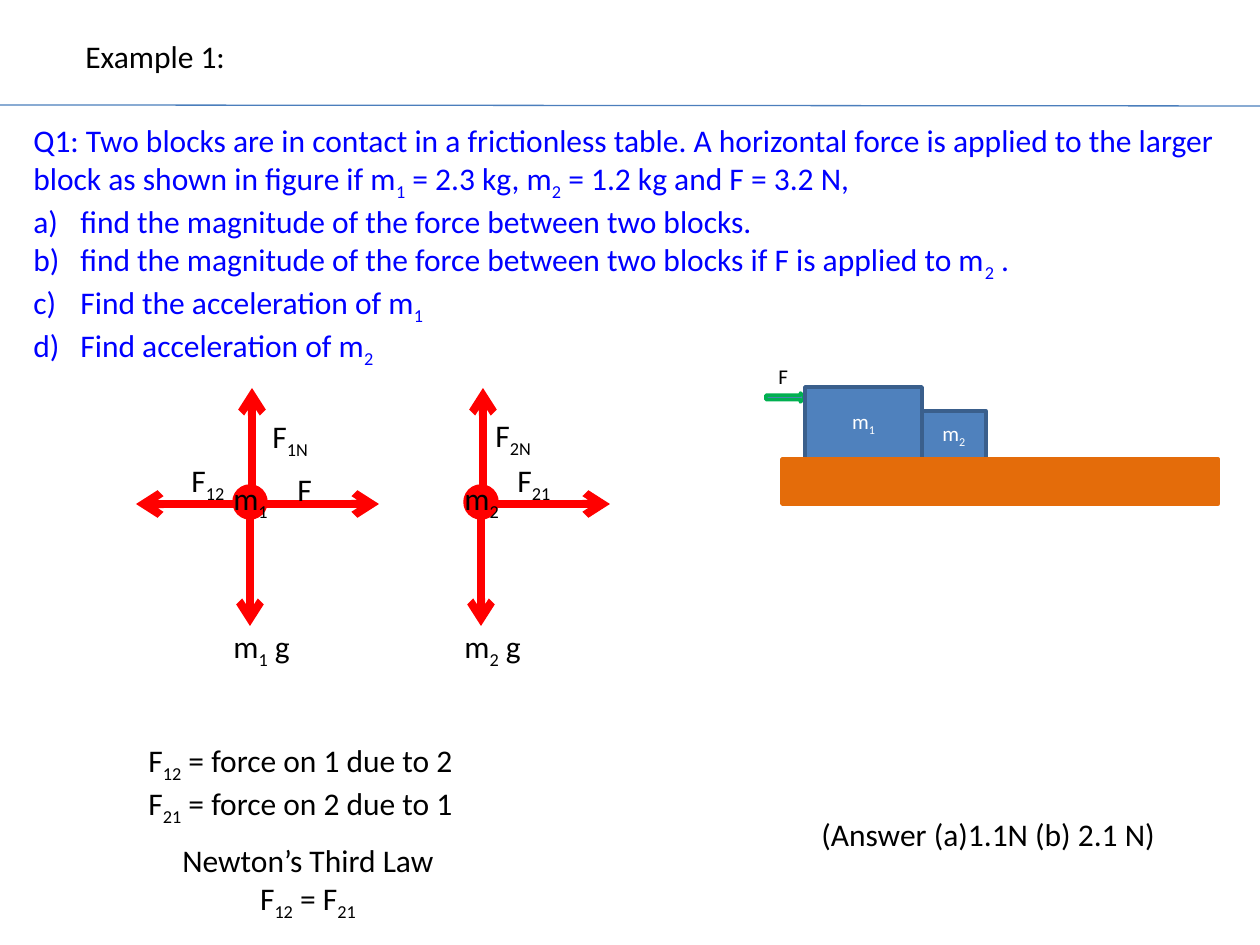
from dataclasses import dataclass

from lxml import etree
from pptx import Presentation
from pptx import util as u
from pptx.dml.color import RGBColor
from pptx.enum import shapes, text
from pptx.oxml.ns import qn

PX_PER_INCH = 126
EMU_PER_PX = 914400 / PX_PER_INCH


@dataclass(frozen=True)
class Theme:
    font: str = "Calibri"
    body: int = 18
    small: int = 12
    black: str = "000000"
    white: str = "FFFFFF"
    question: str = "0000FF"
    force: str = "FF0000"
    rule: str = "4B7EBC"
    block: str = "4F81BD"
    block_edge: str = "3A5F8C"
    table: str = "E46C0A"
    push: str = "00B050"


THEME = Theme()


def px(*lengths):
    return [u.Emu(round(length * EMU_PER_PX)) for length in lengths]


def write(frame, lines, size=THEME.body, color=THEME.black, align=text.PP_ALIGN.LEFT):
    """Write one paragraph per line; text between bars is subscript."""
    for index, line in enumerate(lines):
        paragraph = frame.paragraphs[0] if index == 0 else frame.add_paragraph()
        paragraph.alignment = align
        for part, words in enumerate(line.split("|")):
            if not words:
                continue
            run = paragraph.add_run()
            run.text = words
            run.font.name = THEME.font
            run.font.size = u.Pt(size)
            run.font.color.rgb = RGBColor.from_string(color)
            if part % 2:
                run.font._element.set("baseline", "-25000")


def add_text(slide, box, *lines, wrap=False, **text_format):
    frame = slide.shapes.add_textbox(*px(*box)).text_frame
    frame.word_wrap = wrap
    frame.auto_size = text.MSO_AUTO_SIZE.SHAPE_TO_FIT_TEXT
    write(frame, lines, **text_format)
    return frame


def letter_paragraphs(paragraphs):
    """Number paragraphs a), b), c) with a hanging indent."""
    indent = px(47)[0]
    for paragraph in paragraphs:
        properties = paragraph._p.get_or_add_pPr()
        properties.set("marL", str(indent))
        properties.set("indent", str(-indent))
        etree.SubElement(properties, qn("a:buFont"), typeface="+mj-lt")
        etree.SubElement(properties, qn("a:buAutoNum"), type="alphaLcParenR")


def add_solid(slide, kind, box, fill, edge, label=None):
    shape = slide.shapes.add_shape(kind, *px(*box))
    shape.shadow.inherit = False
    shape.fill.solid()
    shape.fill.fore_color.rgb = RGBColor.from_string(fill)
    shape.line.color.rgb = RGBColor.from_string(edge)
    shape.line.width = u.Pt(2)
    if label:
        shape.text_frame.vertical_anchor = text.MSO_ANCHOR.MIDDLE
        write(shape.text_frame, [label], size=THEME.small, color=THEME.white,
              align=text.PP_ALIGN.CENTER)


def add_line(slide, start, end, color, width, arrow=False):
    line = slide.shapes.add_connector(shapes.MSO_CONNECTOR.STRAIGHT, *px(*start, *end))
    line.line.color.rgb = RGBColor.from_string(color)
    line.line.width = u.Pt(width)
    if arrow:
        etree.SubElement(line.line._get_or_add_ln(), qn("a:tailEnd"), type="arrow")
    etree.SubElement(line._element.spPr, qn("a:effectLst"))


def add_block_scene(slide):
    kinds = shapes.MSO_SHAPE
    add_solid(slide, kinds.RIGHT_ARROW, (766, 393, 39, 9), THEME.block, THEME.push)
    add_solid(slide, kinds.RECTANGLE, (805, 387, 117, 72), THEME.block,
              THEME.block_edge, "m|1|")
    add_solid(slide, kinds.RECTANGLE, (922, 411, 64, 48), THEME.block,
              THEME.block_edge, "m|2|")
    add_solid(slide, kinds.RECTANGLE, (782, 459, 436, 45), THEME.table, THEME.table)
    add_text(slide, (766, 357, 32, 38), "F", wrap=True, size=THEME.small)


def add_free_body(slide, x, forces, labels):
    """Draw a mass centred at x; forces are (from, to) offsets from (x, 504)."""
    y = 504
    for (x1, y1), (x2, y2) in forces:
        add_line(slide, (x + x1, y + y1), (x + x2, y + y2), THEME.force, 4.5, arrow=True)
    for box in ((x - 7, y - 10, 10, 21), (x - 16, y - 18, 32, 32)):
        add_solid(slide, shapes.MSO_SHAPE.OVAL, box, THEME.force, THEME.force)
    for label, left, top, width in labels:
        add_text(slide, (x + left, y + top, width, 50), label)


def main():
    presentation = Presentation()
    presentation.slide_width, presentation.slide_height = px(1260, 945)
    slide = presentation.slides.add_slide(presentation.slide_layouts[6])

    add_line(slide, (0, 105), (1260, 106), THEME.rule, 0.75)
    add_text(slide, (73, 31, 166, 50), "Example 1:")
    add_block_scene(slide)
    question = add_text(
        slide, (21, 115, 1218, 242),
        "Q1: Two blocks are in contact in a frictionless table. A horizontal force is "
        "applied to the larger block as shown in figure if m|1| = 2.3 kg, m|2| = 1.2 kg "
        "and F = 3.2 N,",
        "find the magnitude of the force between two blocks.",
        "find the magnitude of the force between two blocks if F is applied to m|2| .",
        "Find the acceleration of m|1|",
        "Find acceleration of m|2|",
        wrap=True, color=THEME.question)
    letter_paragraphs(question.paragraphs[1:])

    weight = ((0, 6), (0, 122))
    right_push = ((-7, 0), (129, 0))
    normal = ((2, 0), (2, -116))
    left_push = ((-8, 0), (-114, 0))
    add_free_body(slide, 250, (weight, right_push, normal, left_push), (
        ("m|1| g", -29, 117, 84), ("F", 35, -40, 40), ("F|1N|", 10, -93, 64),
        ("F|12|", -71, -49, 62), ("m|1|", -29, -31, 62)))
    add_free_body(slide, 481, (weight, right_push, normal), (
        ("m|2| g", -29, 117, 84), ("F|2N|", 2, -94, 64),
        ("m|2|", -29, -31, 62), ("F|21|", 24, -49, 62)))

    add_text(slide, (136, 735, 388, 89), "F|12| = force on 1 due to 2",
             "F|21| = force on 2 due to 1", wrap=True)
    add_text(slide, (168, 835, 280, 89), "Newton’s Third Law", "F|12| = F|21|",
             align=text.PP_ALIGN.CENTER)
    add_text(slide, (809, 809, 363, 50), "(Answer (a)1.1N (b) 2.1 N)")
    presentation.save("out.pptx")


if __name__ == "__main__":
    main()
